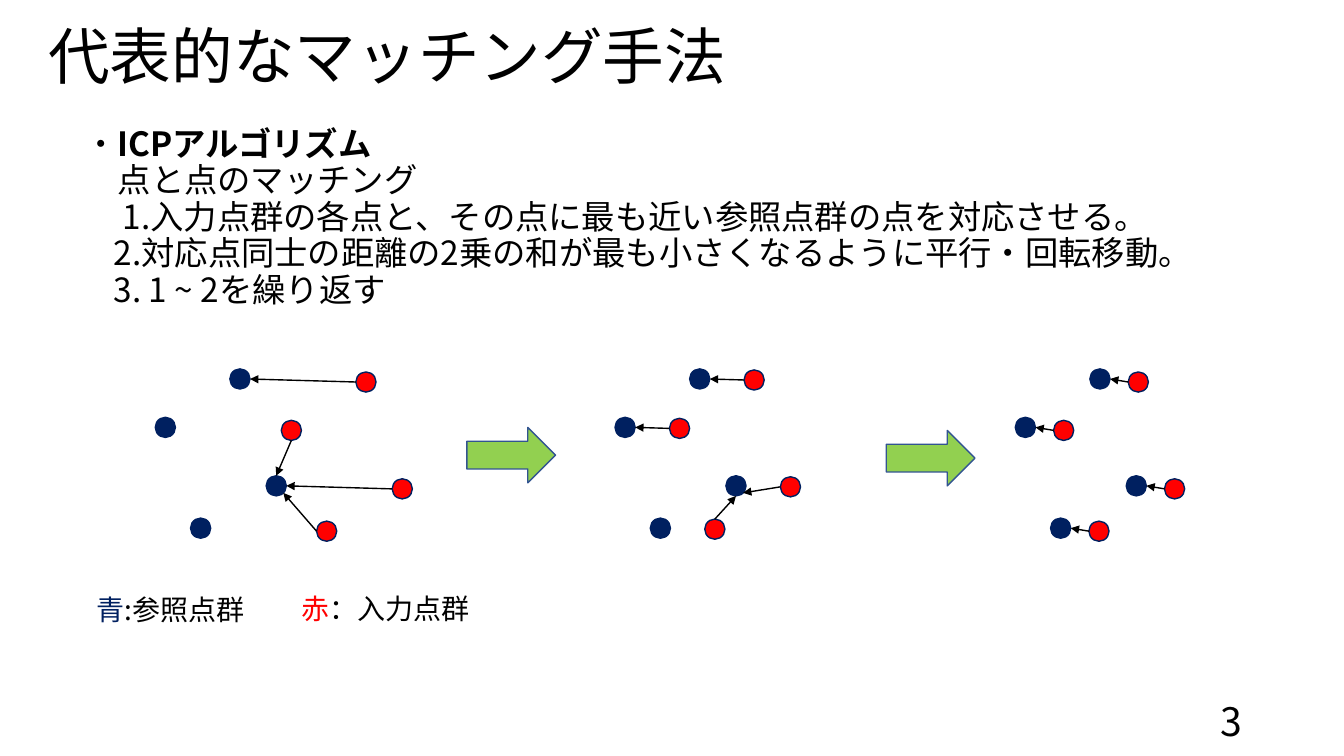
from lxml import etree
from pptx import Presentation
from pptx.dml.color import RGBColor
from pptx.enum.shapes import MSO_CONNECTOR, MSO_SHAPE
from pptx.enum.text import MSO_ANCHOR, MSO_AUTO_SIZE, PP_ALIGN
from pptx.oxml.ns import qn
from pptx.util import Inches, Pt

FONT = "Noto Sans CJK JP"
BLACK, NAVY, RED = "000000", "002060", "FF0000"
GREEN, ARROW_EDGE = "92D050", "325491"

DOT = 0.2
# Reference points, relative to the stage's top left corner
REFERENCE = [(0.35, 1.48), (0, 0.48), (0.74, 0), (1.1, 1.06)]
# Places on a dot's edge, as fractions of its size
SITES = {"left": (0, 0.5), "right": (1, 0.5), "top": (0.5, 0),
         "bottom": (0.5, 1), "corner": (0.85, 0.85)}
# Stage: left, shift of the input points, and matches
# (input point, its site, reference point, its site)
STAGES = [
    (1.54, (1.25, 0.03), [(2, "left", 2, "right"), (1, "bottom", 3, "top"),
                          (3, "left", 3, "right"), (0, "left", 3, "corner")]),
    (6.1, (0.54, 0.01), [(2, "left", 2, "right"), (1, "left", 1, "right"),
                         (3, "left", 3, "corner"), (0, "top", 3, "bottom")]),
    (10.07, (0.38, 0.03), [(i, "left", i, "right") for i in range(4)]),
]
# Paragraphs: text, bold, left margin
STEPS = [
    ([("・", False), ("ICPアルゴリズム", True)], 0),
    ([("点と点のマッチング", False)], 0.33),
    ([("1.入力点群の各点と、その点に最も近い参照点群の点を対応させる。", False)], 0.38),
    ([("2.対応点同士の距離の2乗の和が最も小さくなるように平行・回転移動。", False)], 0.29),
    ([("3. 1 ~ 2を繰り返す", False)], 0.29),
]


def rgb(color):
    return RGBColor.from_string(color)


def add_run(p, text, size, color=BLACK, bold=False):
    r = p.add_run()
    r.text = text
    r.font.size = Pt(size)
    r.font.bold = bold
    r.font.color.rgb = rgb(color)
    r.font.name = FONT
    ea = etree.SubElement(r._r.get_or_add_rPr(), qn("a:ea"))
    ea.set("typeface", FONT)


def add_text_frame(slide, x, y, w, h):
    box = slide.shapes.add_textbox(Inches(x), Inches(y), Inches(w), Inches(h))
    tf = box.text_frame
    tf.word_wrap = True
    return tf


def add_shape(slide, kind, x, y, w, h, fill, line):
    sp = slide.shapes.add_shape(kind, Inches(x), Inches(y), Inches(w), Inches(h))
    sp.shadow.inherit = False
    sp.fill.solid()
    sp.fill.fore_color.rgb = rgb(fill)
    sp.line.color.rgb = rgb(line)
    sp.line.width = Pt(1)


def add_arrow(slide, start, end):
    cx = slide.shapes.add_connector(MSO_CONNECTOR.STRAIGHT,
                                    *[Inches(v) for v in (*start, *end)])
    cx.line.color.rgb = rgb(BLACK)
    cx.line.width = Pt(1)
    tail = etree.SubElement(cx.line._get_or_add_ln(), qn("a:tailEnd"))
    tail.set("type", "triangle")
    etree.SubElement(cx._element.spPr, qn("a:effectLst"))


def add_title(slide, x, y, w, h):
    title = slide.shapes.title
    title.left, title.top = Inches(x), Inches(y)
    title.width, title.height = Inches(w), Inches(h)
    tf = title.text_frame
    tf.auto_size = MSO_AUTO_SIZE.NONE
    tf.vertical_anchor = MSO_ANCHOR.MIDDLE
    p = tf.paragraphs[0]
    p.alignment = PP_ALIGN.LEFT
    p.line_spacing = 0.9
    add_run(p, "代表的なマッチング手法", 44)


def add_steps(slide, x, y, w, h):
    tf = add_text_frame(slide, x, y, w, h)
    for i, (runs, margin) in enumerate(STEPS):
        p = tf.add_paragraph() if i else tf.paragraphs[0]
        p.line_spacing = 0.7
        p.space_before = Pt(6 if i else 0)
        p._p.get_or_add_pPr().set("marL", str(Inches(margin)))
        for text, bold in runs:
            add_run(p, text, 23.8, bold=bold)


def add_stage(slide, x, y, shift, matches):
    """Draw both point sets and an arrow from each matched input point."""
    reference = [(x + px, y + py) for px, py in REFERENCE]
    inputs = [(px + shift[0], py + shift[1]) for px, py in reference]
    for points, color in ((reference, NAVY), (inputs, RED)):
        for px, py in points:
            add_shape(slide, MSO_SHAPE.OVAL, px, py, DOT, DOT, color, NAVY)

    def edge(point, site):
        return [v + DOT * f for v, f in zip(point, SITES[site])]

    for i, i_site, j, j_site in matches:
        add_arrow(slide, edge(inputs[i], i_site), edge(reference[j], j_site))


def add_legend(slide, x, y, name, color, meaning):
    p = add_text_frame(slide, x, y, 1.88, 0.44).paragraphs[0]
    add_run(p, name, 20, color)
    add_run(p, meaning, 20)


def add_page_number(slide, x, y, w, h):
    tf = add_text_frame(slide, x, y, w, h)
    tf.vertical_anchor = MSO_ANCHOR.MIDDLE
    p = tf.paragraphs[0]
    p.alignment = PP_ALIGN.RIGHT
    add_run(p, "3", 28)


def main():
    prs = Presentation()
    prs.slide_width, prs.slide_height = Inches(13.33), Inches(7.5)
    slide = prs.slides.add_slide(prs.slide_layouts[5])
    add_title(slide, 0.38, 0.08, 10.63, 1.03)
    add_steps(slide, 0.74, 1.28, 12.46, 2.22)
    for x, shift, matches in STAGES:
        add_stage(slide, x, 3.66, shift, matches)
    for x, y in ((4.63, 4.24), (8.79, 4.27)):
        add_shape(slide, MSO_SHAPE.RIGHT_ARROW, x, y, 0.88, 0.55, GREEN, ARROW_EDGE)
    add_legend(slide, 0.86, 5.83, "青", NAVY, ":参照点群")
    add_legend(slide, 2.89, 5.82, "赤", RED, "：入力点群")
    add_page_number(slide, 9.42, 6.95, 3, 0.4)
    prs.save("out.pptx")


if __name__ == "__main__":
    main()
